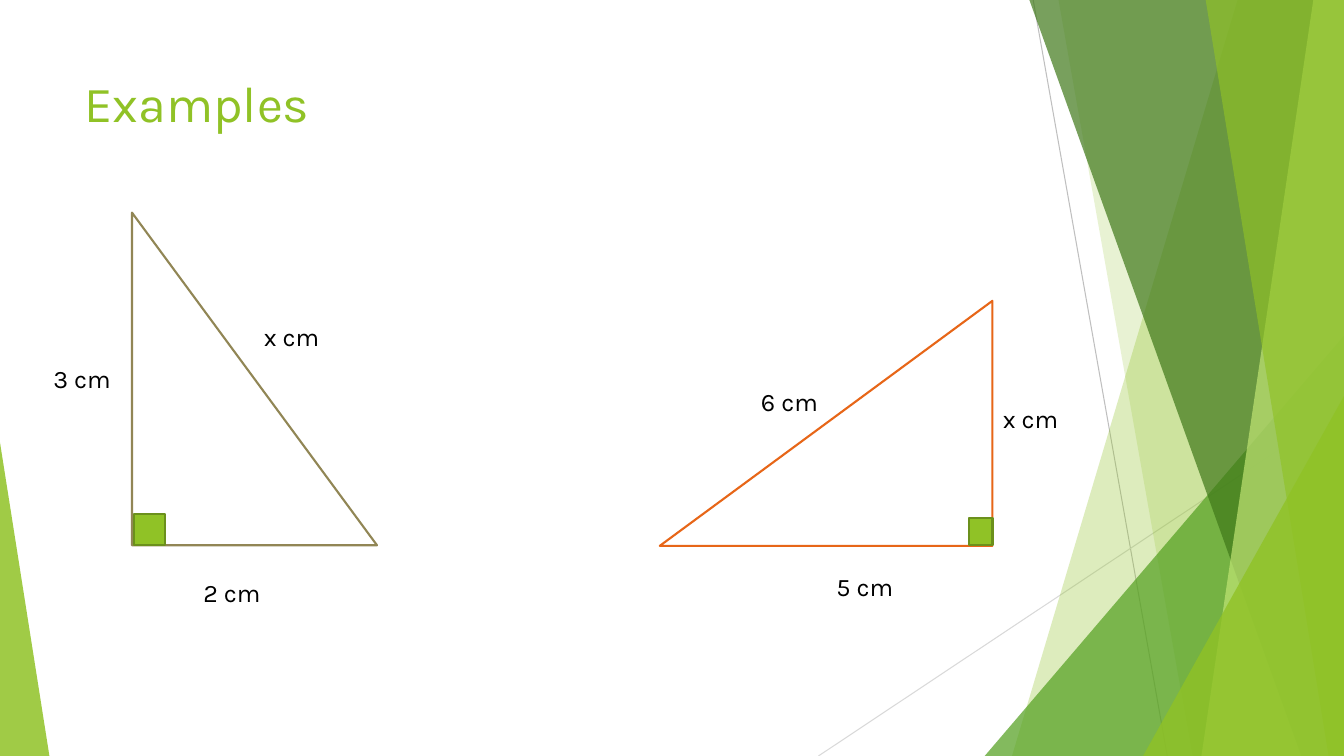
import pptx
import pptx.util
from lxml import etree
from pptx.dml.color import RGBColor
from pptx.enum.shapes import MSO_CONNECTOR, MSO_SHAPE
from pptx.enum.text import MSO_ANCHOR, MSO_AUTO_SIZE, PP_ALIGN
from pptx.oxml.ns import qn

Pt = pptx.util.Pt

FONT = "Karla"
WIDTH, HEIGHT = 960, 540
TOP = -0.6  # the bands start just above the slide edge

GREEN = RGBColor(0x90, 0xC2, 0x26)
MID_GREEN = RGBColor(0x54, 0xA0, 0x21)
DARK_GREEN = RGBColor(0x3F, 0x78, 0x19)
PALE_GREEN = RGBColor(0xC0, 0xE4, 0x74)
EDGE_GREEN = RGBColor(0x6B, 0x90, 0x1C)
OLIVE = RGBColor(0x91, 0x86, 0x55)
ORANGE = RGBColor(0xE7, 0x66, 0x18)
GREY = RGBColor(0xBF, 0xBF, 0xBF)
LIGHT_GREY = RGBColor(0xD9, 0xD9, 0xD9)
WHITE = RGBColor(0xFF, 0xFF, 0xFF)
BLACK = RGBColor(0, 0, 0)


def paint(sp, color, opacity=100, line=None):
    sp.shadow.inherit = False
    sp.fill.solid()
    sp.fill.fore_color.rgb = color
    if opacity < 100:
        clr = sp.element.spPr.find(qn("a:solidFill")).find(qn("a:srgbClr"))
        etree.SubElement(clr, qn("a:alpha")).set("val", str(opacity * 1000))
    if line is None:
        sp.line.fill.background()
    else:
        sp.line.color.rgb = line
        sp.line.width = Pt(1.5)


def add_line(s, x1, y1, x2, y2, color):
    line = s.shapes.add_connector(
        MSO_CONNECTOR.STRAIGHT, Pt(x1), Pt(y1), Pt(x2), Pt(y2))
    line.line.color.rgb = color
    line.line.width = Pt(0.75)
    etree.SubElement(line.element.spPr, qn("a:effectLst"))


def add_band(s, top_x, bottom_x, color, opacity):
    """Slanted band that reaches to the right edge of the slide."""
    builder = s.shapes.build_freeform(Pt(top_x), Pt(TOP))
    corners = [(WIDTH, TOP), (WIDTH, HEIGHT), (bottom_x, HEIGHT)]
    builder.add_line_segments([(Pt(x), Pt(y)) for x, y in corners])
    paint(builder.convert_to_shape(), color, opacity)


def add_shape(s, kind, x, y, w, h, color, opacity=100, line=None):
    sp = s.shapes.add_shape(kind, Pt(x), Pt(y), Pt(w), Pt(h))
    paint(sp, color, opacity, line)
    return sp


def add_corner(s, x, y, w, color, opacity, apex):
    """Triangle standing on the bottom edge, apex at 0 (left) or 1 (right)."""
    sp = add_shape(s, MSO_SHAPE.ISOSCELES_TRIANGLE, x, y, w, HEIGHT - y,
                   color, opacity)
    sp.adjustments[0] = apex


def add_label(s, text, x, y, w):
    tf = s.shapes.add_textbox(Pt(x), Pt(y), Pt(w), Pt(29)).text_frame
    tf.word_wrap = True
    tf.auto_size = MSO_AUTO_SIZE.SHAPE_TO_FIT_TEXT
    p = tf.paragraphs[0]
    p.text = text
    p.font.name, p.font.size = FONT, Pt(18)
    p.font.color.rgb = BLACK


def add_title(s, text):
    title = s.shapes.title
    title.left, title.top = Pt(53.3), Pt(48.2)
    title.width, title.height = Pt(676.8), Pt(103.7)
    tf = title.text_frame
    tf.vertical_anchor = MSO_ANCHOR.TOP
    p = tf.paragraphs[0]
    p.text = text
    p.alignment = PP_ALIGN.LEFT
    p.font.name, p.font.size = FONT, Pt(36)
    p.font.color.rgb = GREEN
    title.element.getparent().append(title.element)  # above the decoration


def add_decoration(s):
    add_line(s, 738, 0, 833.8, HEIGHT, GREY)
    add_line(s, WIDTH, 290.2, 584.6, HEIGHT, LIGHT_GREY)
    add_band(s, 884.2, 722.9, GREEN, 30)
    add_band(s, 756, 851.8, GREEN, 20)
    add_corner(s, 703.4, 239.8, 256.6, MID_GREEN, 72, 1)
    add_band(s, 735.1, 929.5, DARK_GREEN, 70)
    add_band(s, 938.2, 858.2, PALE_GREEN, 70)
    add_band(s, 861.1, 949, GREEN, 65)
    add_corner(s, 816.5, 283, 143.5, GREEN, 80, 1)
    add_corner(s, 0, 316.1, 35.3, GREEN, 85, 0)


def main():
    prs = pptx.Presentation()
    prs.slide_width, prs.slide_height = Pt(WIDTH), Pt(HEIGHT)
    s = prs.slides.add_slide(prs.slide_layouts[5])

    add_decoration(s)
    add_title(s, "Examples")

    # Right-angled triangles
    right = MSO_SHAPE.RIGHT_TRIANGLE
    add_shape(s, right, 94.3, 151.9, 175, 237.6, WHITE, line=OLIVE)
    turned = add_shape(s, right, 502.6, 183.6, 175, 237.6, WHITE, line=ORANGE)
    turned.rotation = 270

    # Right-angle markers
    square = MSO_SHAPE.RECTANGLE
    add_shape(s, square, 95.6, 367, 22.3, 22.3, GREEN, line=EDGE_GREEN)
    add_shape(s, square, 692, 370, 17, 19.3, GREEN, line=EDGE_GREEN)

    # Side lengths
    for text, x, y, w in [
        ("x cm", 181.4, 226.1, 64),
        ("2 cm", 138.2, 408.6, 60.5),
        ("3 cm", 31, 255.6, 64.8),
        ("6 cm", 536.4, 272.2, 80.6),
        ("x cm", 709.2, 284.8, 60),
        ("5 cm", 590.4, 404.6, 63.4),
    ]:
        add_label(s, text, x, y, w)

    prs.save("out.pptx")


if __name__ == "__main__":
    main()
